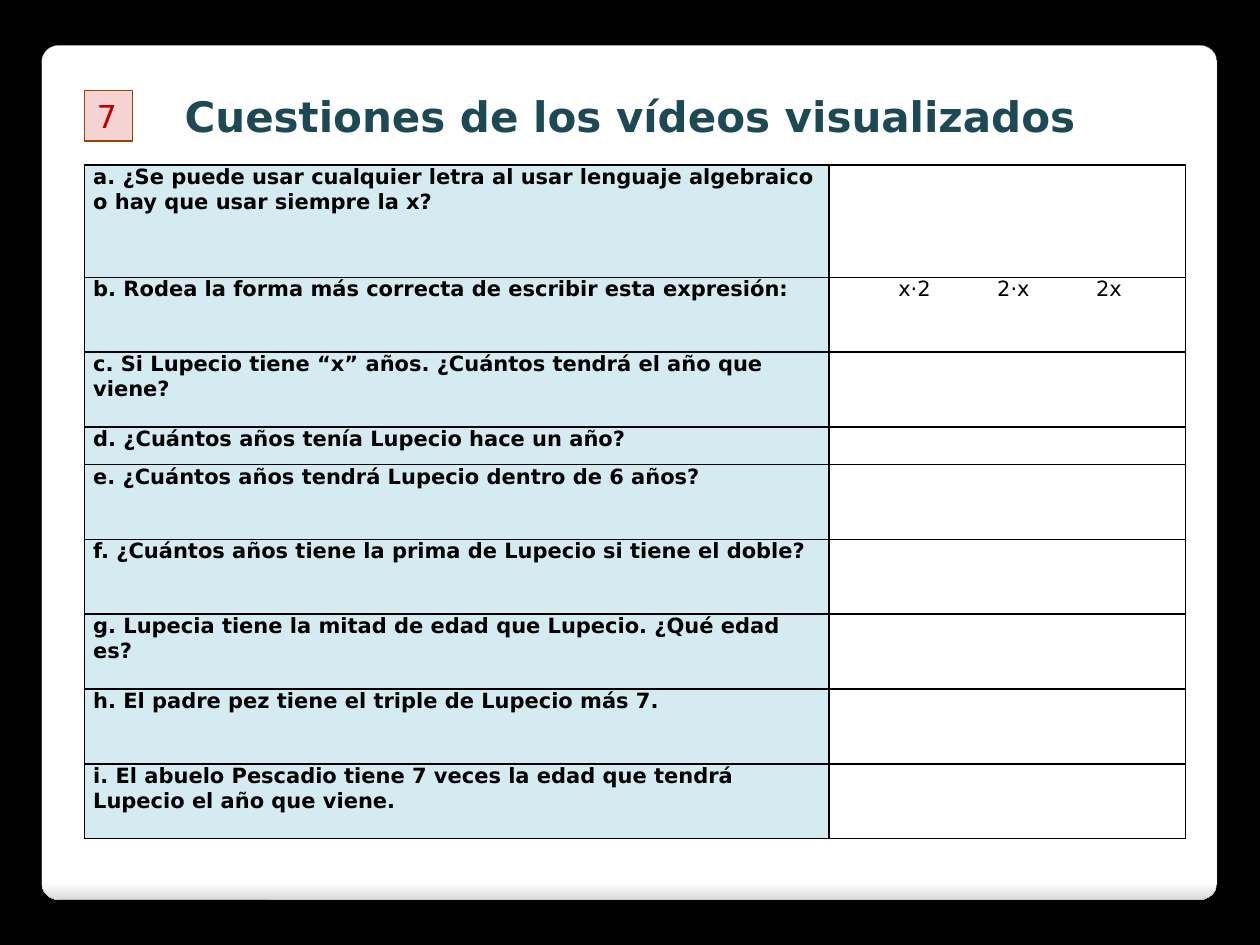
from lxml.etree import SubElement
from pptx import Presentation
from pptx.dml.color import RGBColor
from pptx.enum.shapes import MSO_SHAPE as Shape
from pptx.enum.text import MSO_ANCHOR as Anchor, PP_ALIGN as Align
from pptx.oxml.ns import qn
from pptx.util import Inches, Pt

FONT = "DejaVu Sans"
TITLE = "Cuestiones de los vídeos visualizados"
NUMBER = "7"
QUESTIONS = [
    ("a. ¿Se puede usar cualquier letra al usar lenguaje algebraico o hay que usar siempre la x?", [], 3),
    ("b. Rodea la forma más correcta de escribir esta expresión:", ["x⋅2", "2⋅x", "2x"], 2),
    ("c. Si Lupecio tiene “x” años. ¿Cuántos tendrá el año que viene?", [], 2),
    ("d. ¿Cuántos años tenía Lupecio hace un año?", [], 1),
    ("e. ¿Cuántos años tendrá Lupecio dentro de 6 años?", [], 2),
    ("f. ¿Cuántos años tiene la prima de Lupecio si tiene el doble?", [], 2),
    ("g. Lupecia tiene la mitad de edad que Lupecio. ¿Qué edad es?", [], 2),
    ("h. El padre pez tiene el triple de Lupecio más 7.", [], 2),
    ("i. El abuelo Pescadio tiene 7 veces la edad que tendrá Lupecio el año que viene.", [], 2),
]
COLUMNS = [5.91, 2.83]
LEFT, TABLE_TOP, TABLE_HEIGHT = 0.67, 1.31, 5.35
FIRST_TAB, TAB_STEP = 0.48, 0.785


def color(value):
    return RGBColor.from_string(value)


def style(font, size, value, bold=False):
    font.name, font.size, font.bold = FONT, Pt(size), bold
    font.color.rgb = color(value)


def box(slide, kind, place, line, width):
    shape = slide.shapes.add_shape(kind, *map(Inches, place))
    shape.shadow.inherit = False
    shape.line.color.rgb = color(line)
    shape.line.width = Pt(width)
    return shape


def add_panel(slide):
    panel = box(slide, Shape.ROUNDED_RECTANGLE, (0.33, 0.36, 9.33, 6.78), "A4A4A4", 0.16)
    panel.adjustments[0] = 0.02
    panel.fill.gradient()
    panel.fill.gradient_angle = 270
    for stop, (position, value) in zip(panel.fill.gradient_stops, [(0.98, "FFFFFF"), (1, "DADADA")]):
        stop.position = position
        stop.color.rgb = color(value)
    slide.shapes.title.element.addprevious(panel.element)


def add_title(slide):
    title = slide.shapes.title
    title.left, title.top, title.width, title.height = map(Inches, (0.39, 0.67, 9.22, 0.5))
    frame = title.text_frame
    frame.text = TITLE
    frame.vertical_anchor = Anchor.MIDDLE
    frame.paragraphs[0].alignment = Align.CENTER
    style(frame.paragraphs[0].runs[0].font, 24, "1C4954", True)


def add_number(slide):
    badge = box(slide, Shape.RECTANGLE, (LEFT, 0.72, 0.38, 0.4), "964305", 0.75)
    badge.fill.solid()
    badge.fill.fore_color.rgb = color("F5D3D3")
    frame = badge.text_frame
    frame.text = NUMBER
    frame.word_wrap = False
    frame.paragraphs[0].alignment = Align.LEFT
    style(frame.paragraphs[0].runs[0].font, 18, "C00000")


def add_borders(cell):
    properties = cell._tc.get_or_add_tcPr()
    for index, side in enumerate(("lnL", "lnR", "lnT", "lnB")):
        line = properties.makeelement(qn(f"a:{side}"), {"w": str(Pt(1))})
        fill = SubElement(line, qn("a:solidFill"))
        SubElement(fill, qn("a:srgbClr"), val="000000")
        properties.insert(index, line)


def fill_cell(cell, text, bold, tabs):
    cell.margin_left = cell.margin_right = Inches(0.07)
    cell.margin_top = cell.margin_bottom = 0
    cell.text_frame.text = text
    paragraph = cell.text_frame.paragraphs[0]
    if tabs:
        stops = SubElement(paragraph._p.get_or_add_pPr(), qn("a:tabLst"))
        for index in range(tabs):
            SubElement(stops, qn("a:tab"), pos=str(Inches(FIRST_TAB + index * TAB_STEP)), algn="l")
    for run in paragraph.runs:
        style(run.font, 12, "000000", bold)
    if not text:
        SubElement(paragraph._p, qn("a:endParaRPr"), sz="1200")
    if bold:
        cell.fill.solid()
        cell.fill.fore_color.rgb = color("D4EBF1")
    else:
        cell.fill.background()
    add_borders(cell)


def add_questions(slide):
    place = map(Inches, (LEFT, TABLE_TOP, sum(COLUMNS), TABLE_HEIGHT))
    table = slide.shapes.add_table(len(QUESTIONS), len(COLUMNS), *place).table
    table.first_row = table.horz_banding = False
    for column, width in zip(table.columns, COLUMNS):
        column.width = Inches(width)
    unit = TABLE_HEIGHT / sum(units for _, _, units in QUESTIONS)
    for row, (question, options, units) in zip(table.rows, QUESTIONS):
        row.height = Inches(units * unit)
        fill_cell(row.cells[0], question, True, 0)
        fill_cell(row.cells[1], "".join("\t" + option for option in options), False, len(options))


def main():
    presentation = Presentation()
    presentation.slide_width, presentation.slide_height = Inches(10), Inches(7.5)
    slide = presentation.slides.add_slide(presentation.slide_layouts[5])
    slide.background.fill.solid()
    slide.background.fill.fore_color.rgb = color("000000")
    add_panel(slide)
    add_title(slide)
    add_questions(slide)
    add_number(slide)
    presentation.save("out.pptx")


if __name__ == "__main__":
    main()
